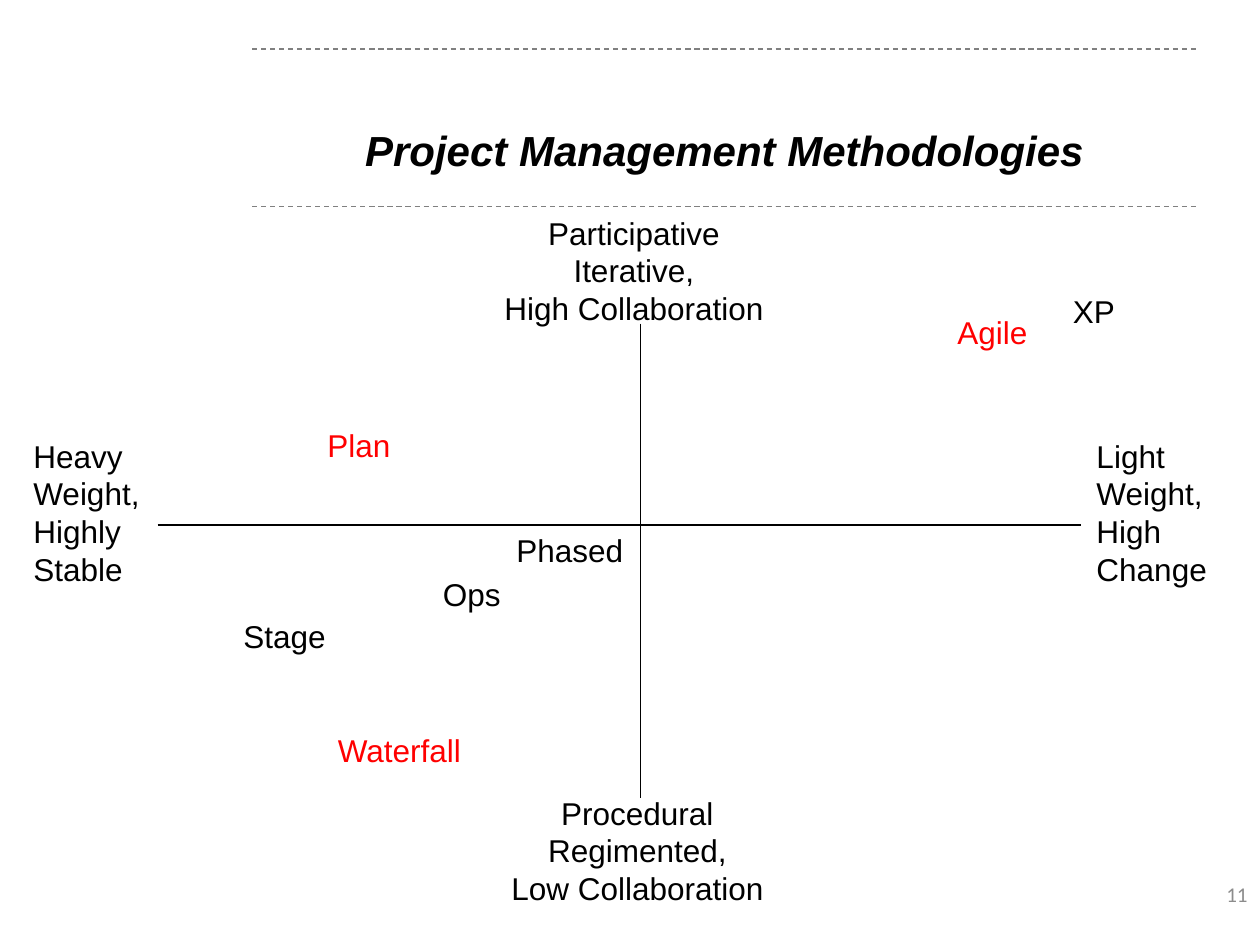
from lxml import etree
from pptx import Presentation
from pptx import util as u
from pptx.dml import color
from pptx.enum import dml, shapes, text
from pptx.oxml import ns

COLOURS = {"ink": "000000", "accent": "FF0000", "rule": "808080", "number": "8C8C8C"}
LEFT, CENTRE, RIGHT = text.PP_ALIGN.LEFT, text.PP_ALIGN.CENTER, text.PP_ALIGN.RIGHT


class MethodologyMap:
    def __init__(self, deck):
        self.slide = deck.slides.add_slide(deck.slide_layouts[5])
        self.face = "Arial"
        self.size = 18

    def style(self, paragraph, colour, align, size=None, face=None, strong=False):
        paragraph.alignment = align
        font = paragraph.font
        font.name = face or self.face
        font.size = u.Pt(size or self.size)
        font.color.rgb = color.RGBColor.from_string(COLOURS[colour])
        font.bold = font.italic = strong

    def title(self, wording, left, top, width, height):
        heading = self.slide.shapes.title
        heading.left, heading.top = u.Pt(left), u.Pt(top)
        heading.width, heading.height = u.Pt(width), u.Pt(height)
        frame = heading.text_frame
        frame.text = wording
        frame.word_wrap = True
        frame.vertical_anchor = text.MSO_ANCHOR.MIDDLE
        self.style(frame.paragraphs[0], "ink", CENTRE, size=24, strong=True)

    def line(self, x1, y1, x2, y2, colour="ink", dashed=False):
        stroke = self.slide.shapes.add_connector(
            shapes.MSO_CONNECTOR.STRAIGHT, u.Pt(x1), u.Pt(y1), u.Pt(x2), u.Pt(y2))
        stroke.line.width = u.Pt(0.75)
        stroke.line.color.rgb = color.RGBColor.from_string(COLOURS[colour])
        if dashed:
            stroke.line.dash_style = dml.MSO_LINE.DASH
        etree.SubElement(stroke._element.spPr, ns.qn("a:effectLst"))

    def label(self, lines, left, top, width, height, colour="ink", align=LEFT):
        frame = self.slide.shapes.add_textbox(
            u.Pt(left), u.Pt(top), u.Pt(width), u.Pt(height)).text_frame
        frame.word_wrap = False
        frame.auto_size = text.MSO_AUTO_SIZE.SHAPE_TO_FIT_TEXT
        frame.text = "\n".join(lines)
        for paragraph in frame.paragraphs:
            self.style(paragraph, colour, align)

    def page_number(self, number, left, top, width, height):
        frame = self.slide.shapes.add_textbox(
            u.Pt(left), u.Pt(top), u.Pt(width), u.Pt(height)).text_frame
        frame.word_wrap = True
        frame.vertical_anchor = text.MSO_ANCHOR.MIDDLE
        frame.text = number
        self.style(frame.paragraphs[0], "number", RIGHT, size=12, face="Calibri")


def main():
    deck = Presentation()
    deck.slide_width, deck.slide_height = u.Pt(720), u.Pt(540)
    chart = MethodologyMap(deck)

    for rule_y in (28, 118):
        chart.line(144, rule_y, 684, rule_y, "rule", dashed=True)
    chart.title("Project Management Methodologies", 144.75, 60, 538.5, 51)
    chart.page_number("11", 624, 492, 96, 37.5)

    chart.line(90, 300, 618, 300)
    chart.line(366, 185, 366, 456)

    weight_ends = [
        (("Heavy", "Weight,", "Highly", "Stable"), 12, 75.5),
        (("Light", "Weight,", "High", "Change"), 619.5, 77.5),
    ]
    for lines, left, width in weight_ends:
        chart.label(lines, left, 246, width, 94)

    collaboration_ends = [
        (("Participative", "Iterative,", "High Collaboration"), 281, 118.5, 162.5),
        (("Procedural", "Regimented,", "Low Collaboration"), 285, 450, 158.5),
    ]
    for lines, left, top, width in collaboration_ends:
        chart.label(lines, left, top, width, 72, align=CENTRE)

    methodologies = [
        ("Stage", 132, 349, 63, "ink"),
        ("Plan", 180, 240, 52, "accent"),
        ("Ops", 246, 325, 49, "ink"),
        ("Waterfall", 186, 414, 86, "accent"),
        ("Agile", 540, 175.5, 55, "accent"),
        ("XP", 606, 163.5, 40, "ink"),
        ("Phased", 288, 300, 77, "ink"),
    ]
    for name, left, top, width, colour in methodologies:
        chart.label([name], left, top, width, 29, colour)

    deck.save("out.pptx")


if __name__ == "__main__":
    main()
